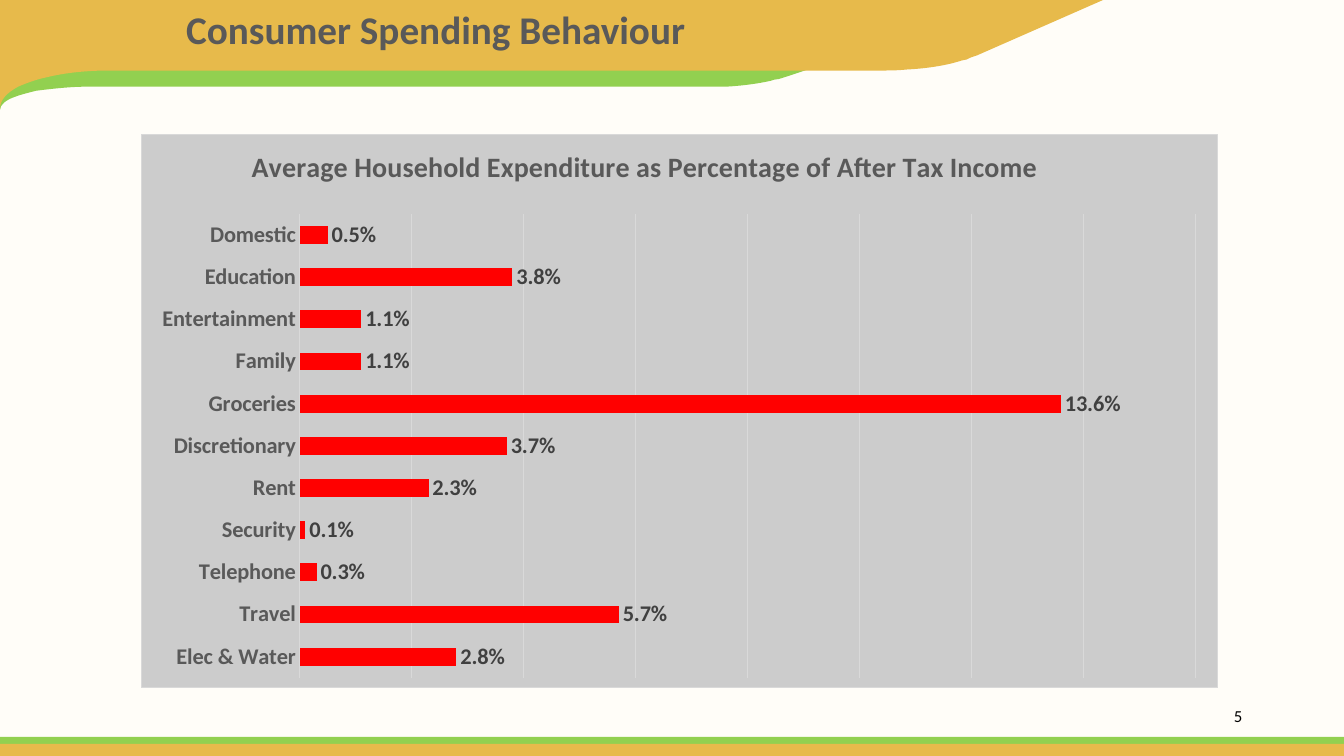
from dataclasses import dataclass

from lxml import etree
from pptx import Presentation
from pptx.chart import data as chart_data
from pptx.dml.color import RGBColor
from pptx.enum import chart as charts, shapes, text
from pptx.oxml import parse_xml
from pptx.oxml.ns import nsdecls, qn
from pptx.util import Inches, Pt

COLORS = {
    "page": "FFFDF8", "green": "92D050", "gold": "E7BA4B", "title": "595959",
    "number": "000000", "panel": "CCCCCC", "grid": "D9D9D9", "bar": "FF0000",
    "label": "404040",
}
FONT = "Calibri"
CHART_LEFT, CHART_TOP, CHART_WIDTH, CHART_HEIGHT = 1.4, 1.33, 10.68, 5.5
SPENDING = {
    "Elec & Water": 0.028, "Travel": 0.057, "Telephone": 0.003,
    "Security": 0.001, "Rent": 0.023, "Discretionary": 0.037,
    "Groceries": 0.136, "Family": 0.011, "Entertainment": 0.011,
    "Education": 0.038, "Domestic": 0.005,
}


@dataclass
class Stripe:
    left: float
    top: float
    color: str


@dataclass
class Wave:
    """Outline in inches: a pair is a line's end, six numbers are a Bézier curve."""
    color: str
    start: tuple
    segments: list


@dataclass
class Label:
    words: str
    frame: tuple
    align: text.PP_ALIGN
    font: dict
    right_inset: float = 0.1


STRIPES = [Stripe(0, 7.31, "green"), Stripe(-0.01, 7.38, "gold")]
WAVES = [
    Wave("green", (8.77, 0.44), [
        (7.77, 0.77), (7.74, 0.78, 7.71, 0.79, 7.68, 0.79),
        (7.67, 0.8, 7.66, 0.8, 7.65, 0.8), (7.52, 0.83, 7.37, 0.85, 7.2, 0.86),
        (7.13, 0.86, 7.06, 0.86, 6.99, 0.86), (6.87, 0.86), (0.86, 0.86),
        (0.7, 0.86, 0.52, 0.88, 0.36, 0.9), (0.28, 0.92, 0.2, 0.94, 0.15, 0.96),
        (0.06, 0.99, 0, 1.04, 0, 1.09), (0, 0.44)]),
    Wave("gold", (10.94, 0), [
        (9.69, 0.55), (9.66, 0.56, 9.62, 0.57, 9.59, 0.59),
        (9.57, 0.59, 9.56, 0.6, 9.54, 0.6), (9.39, 0.65, 9.19, 0.68, 8.99, 0.69),
        (8.9, 0.7, 8.81, 0.7, 8.72, 0.7), (8.58, 0.7), (1.08, 0.7),
        (0.87, 0.7, 0.65, 0.72, 0.45, 0.77), (0.35, 0.79, 0.25, 0.83, 0.18, 0.86),
        (0.07, 0.92, 0, 0.99, 0, 1.08), (0, 0)]),
]
LABELS = [
    Label("Consumer Spending Behaviour", (0, 0, 8.82, 1.18), text.PP_ALIGN.CENTER,
          {"size": Pt(28), "bold": True, "color": "title"}, right_inset=0.28),
    Label("5", (9.42, 6.95, 3, 0.4), text.PP_ALIGN.RIGHT,
          {"size": Pt(12), "color": "number"}),
]


def rgb(name: str) -> RGBColor:
    return RGBColor.from_string(COLORS[name])


def style_font(font, style: dict) -> None:
    for key, value in {"name": FONT, **style}.items():
        if key == "color":
            font.color.rgb = rgb(value)
        else:
            setattr(font, key, value)


def paint(shape, color: str) -> None:
    shape.shadow.inherit = False
    shape.fill.solid()
    shape.fill.fore_color.rgb = rgb(color)
    shape.line.fill.background()


def add_stripe(page, stripe: Stripe) -> None:
    frame = (stripe.left, stripe.top, 13.35, 0.15)
    paint(page.shapes.add_shape(shapes.MSO_SHAPE.RECTANGLE, *map(Inches, frame)),
          stripe.color)


def add_wave(page, wave: Wave) -> None:
    """Draw the outline through the segment ends, then bend the curved segments."""
    builder = page.shapes.build_freeform(*map(Inches, wave.start))
    builder.add_line_segments(
        [tuple(map(Inches, segment[-2:])) for segment in wave.segments], close=True)
    shape = builder.convert_to_shape()
    paint(shape, wave.color)
    lines = list(shape._element.iter(qn("a:lnTo")))
    for line, segment in zip(lines, wave.segments):
        if len(segment) == 2:
            continue
        curve = etree.Element(qn("a:cubicBezTo"))
        for x, y in zip(segment[::2], segment[1::2]):
            point = etree.SubElement(curve, qn("a:pt"))
            point.set("x", str(Inches(x) - shape.left))
            point.set("y", str(Inches(y) - shape.top))
        line.getparent().replace(line, curve)


def add_label(page, label: Label) -> None:
    box = page.shapes.add_textbox(*map(Inches, label.frame))
    box.text_frame.word_wrap = True
    box.text_frame.margin_right = Inches(label.right_inset)
    para = box.text_frame.paragraphs[0]
    para.alignment = label.align
    span = para.add_run()
    span.text = label.words
    style_font(span.font, label.font)


def manual_layout(target: str = "", **inches: float):
    """Fix a place inside the chart, measured from the chart's corner."""
    layout = etree.Element(qn("c:layout"))
    manual = etree.SubElement(layout, qn("c:manualLayout"))
    values = {"layoutTarget": target} if target else {}
    values.update(xMode="edge", yMode="edge")
    for key, length in inches.items():
        values[key] = length / (CHART_WIDTH if key in "xw" else CHART_HEIGHT)
    for key, value in values.items():
        etree.SubElement(manual, qn(f"c:{key}")).set("val", str(value))
    return layout


def drop_layout(parent) -> None:
    for layout in parent.findall(qn("c:layout")):
        parent.remove(layout)


def add_chart_title(chart) -> None:
    chart.has_title = True
    title = chart.chart_title
    title.include_in_layout = False
    span = title.text_frame.paragraphs[0].add_run()
    span.text = "Average Household Expenditure as Percentage of After Tax Income"
    style_font(span.font, {"size": Pt(20), "bold": True, "color": "title"})
    drop_layout(title._element)
    title._element.find(qn("c:tx")).addnext(manual_layout(x=1.04, y=0.07))


def add_spending_chart(page) -> None:
    table = chart_data.CategoryChartData(number_format="0.0%")
    table.categories = SPENDING.keys()
    table.add_series("Series 1", SPENDING.values())
    frame = (CHART_LEFT, CHART_TOP, CHART_WIDTH, CHART_HEIGHT)
    chart = page.shapes.add_chart(charts.XL_CHART_TYPE.BAR_CLUSTERED,
                                  *map(Inches, frame), table).chart
    chart.has_legend = False
    style_font(chart.font, {"size": Pt(10), "color": "number"})
    space = chart._chartSpace
    space.find(qn("c:txPr")).addprevious(parse_xml(
        f'<c:spPr {nsdecls("c", "a")}><a:solidFill><a:srgbClr val="{COLORS["panel"]}"/>'
        f'</a:solidFill><a:ln w="{Pt(0.75)}"><a:solidFill>'
        f'<a:srgbClr val="{COLORS["grid"]}"/></a:solidFill></a:ln></c:spPr>'))
    add_chart_title(chart)
    area = space.chart.plotArea
    drop_layout(area)
    area.insert(0, manual_layout("inner", x=1.57, y=0.79, w=8.89, h=4.61))

    names, amounts = chart.category_axis, chart.value_axis
    names.major_tick_mark = charts.XL_TICK_MARK.NONE
    style_font(names.tick_labels.font, {"size": Pt(16), "bold": True, "color": "title"})
    for key, value in {"minimum_scale": 0, "maximum_scale": 0.16, "major_unit": 0.02,
                       "has_major_gridlines": True, "visible": False}.items():
        setattr(amounts, key, value)
    for line in (names.format.line, amounts.major_gridlines.format.line):
        line.color.rgb = rgb("grid")
        line.width = Pt(0.75)

    plot = chart.plots[0]
    plot.gap_width = 138
    plot.vary_by_categories = False
    bars = plot.series[0]
    bars.format.fill.solid()
    bars.format.fill.fore_color.rgb = rgb("bar")
    for key, value in {"show_value": True, "number_format": "0.0%",
                       "number_format_is_linked": False,
                       "position": charts.XL_LABEL_POSITION.OUTSIDE_END}.items():
        setattr(bars.data_labels, key, value)
    style_font(bars.data_labels.font, {"size": Pt(16), "bold": True, "color": "label"})


def main() -> None:
    deck = Presentation()
    deck.slide_width, deck.slide_height = Inches(13.33), Inches(7.5)
    page = deck.slides.add_slide(deck.slide_layouts[6])
    page.background.fill.solid()
    page.background.fill.fore_color.rgb = rgb("page")
    for draw, items in ((add_stripe, STRIPES), (add_wave, WAVES), (add_label, LABELS)):
        for item in items:
            draw(page, item)
    add_spending_chart(page)
    deck.save("out.pptx")


if __name__ == "__main__":
    main()
